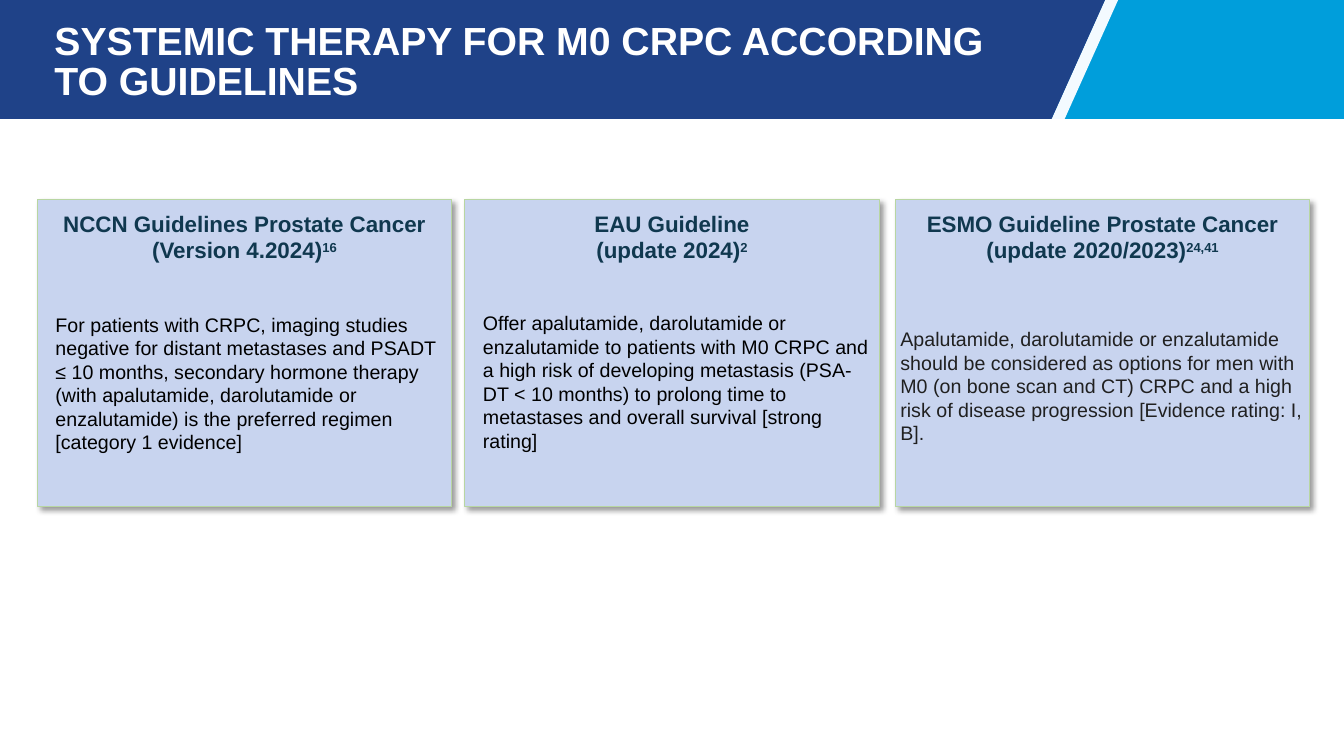
from lxml.etree import SubElement as Sub
from pptx import Presentation
from pptx.dml.color import RGBColor
from pptx.enum.shapes import MSO_SHAPE as Shape
from pptx.enum.text import MSO_ANCHOR as Anchor, PP_ALIGN as Align
from pptx.oxml.ns import qn
from pptx.util import Inches, Pt

WIDE, HIGH = 13.33, 7.5
BAND = 1.18                      # height of the header band
SLANT = 10.96, 10.43             # top and bottom x of its slanted edge
STRIPE = 0.13                    # width of the pale stripe
TOP, CARD_W, CARD_H = 1.98, 4.11, 3.05

HEAD = {"size": Pt(16), "bold": True, "name": "Arial"}
BODY = {"size": Pt(14), "bold": False, "name": "Arial"}
TITLE = {"size": Pt(28), "bold": True, "name": "Arial"}

# left, heading, reference, text, text colour, indent, gap above text
CARDS = [
    (0.37, "NCCN Guidelines Prostate Cancer (Version 4.2024)", "16",
     "For patients with CRPC, imaging studies negative for distant metastases "
     "and PSADT ≤ 10 months, secondary hormone therapy (with apalutamide, "
     "darolutamide or enzalutamide) is the preferred regimen "
     "[category 1 evidence]", "000000", 0.13, 29),
    (4.61, "EAU Guideline\n(update 2024)", "2",
     "Offer apalutamide, darolutamide or enzalutamide to patients with M0 CRPC "
     "and a high risk of developing metastasis (PSA-DT < 10 months) to prolong "
     "time to metastases and overall survival [strong rating]",
     "000000", 0.13, 28),
    (8.88, "ESMO Guideline Prostate Cancer (update 2020/2023)", "24,41",
     "Apalutamide, darolutamide or enzalutamide should be considered as options "
     "for men with M0 (on bone scan and CT) CRPC and a high risk of disease "
     "progression [Evidence rating: I, B].", "202020", 0, 39.5),
]


def put(item, form):
    for key, val in form.items():
        setattr(item, key, val)


def paint(part, tint):
    part.solid()
    part.fore_color.rgb = RGBColor.from_string(tint)


def style(para, form, tint):
    for run in para.runs:
        put(run.font, form)
        paint(run.font.fill, tint)


def inset(frame, left, top, right, low):
    put(frame, {"margin_left": Inches(left), "margin_top": Inches(top),
                "margin_right": Inches(right), "margin_bottom": Inches(low),
                "word_wrap": True})


def outline(slide, points, tint):
    spots = [(Inches(x), Inches(y)) for x, y in points]
    build = slide.shapes.build_freeform(*spots[0])
    build.add_line_segments(spots[1:], close=True)
    shape = build.convert_to_shape()
    shape.shadow.inherit = False
    shape.line.fill.background()
    paint(shape.fill, tint)


def rect(slide, left, top, width, height, tint):
    shape = slide.shapes.add_shape(
        Shape.RECTANGLE, *map(Inches, (left, top, width, height)))
    shape.shadow.inherit = False
    shape.line.fill.background()
    paint(shape.fill, tint)
    return shape


def shade(shape):
    """Soft shadow down and to the right."""
    effect = shape._element.spPr.find(qn("a:effectLst"))
    outer = Sub(effect, qn("a:outerShdw"), blurRad=str(Pt(4)), dist=str(Pt(3)),
                dir="2700000", algn="tl", rotWithShape="0")
    color = Sub(outer, qn("a:srgbClr"), val="000000")
    Sub(color, qn("a:alpha"), val="40000")


def header(slide):
    high, low = SLANT
    rect(slide, low, 0, WIDE - low, BAND, "009EDB")
    outline(slide, [(high, 0), (high + STRIPE, 0), (low + STRIPE, BAND),
                    (low, BAND)], "F3FAFF")
    outline(slide, [(0, 0), (high, 0), (low, BAND), (0, BAND)], "1F4288")


def title(slide, text):
    box = slide.shapes.title
    put(box, {"left": Inches(0.54), "top": Inches(0.14),
              "width": Inches(9.5), "height": Inches(0.97)})
    frame = box.text_frame
    inset(frame, 0, 0.05, 0.1, 0.05)
    frame.vertical_anchor = Anchor.MIDDLE
    para = frame.paragraphs[0]
    para.text = text
    put(para, {"alignment": Align.LEFT, "line_spacing": 0.85})
    style(para, TITLE, "FFFFFF")


def card(slide, left, head, ref, text, tint, indent, gap):
    shape = rect(slide, left, TOP, CARD_W, CARD_H, "C8D4EF")
    paint(shape.line.fill, "B8D6A2")
    shape.line.width = Pt(0.75)
    shade(shape)
    frame = shape.text_frame
    inset(frame, 0.05, 0.1, 0.05, 0.1)
    frame.vertical_anchor = Anchor.TOP

    # Heading with raised reference number
    para = frame.paragraphs[0]
    para.text = head
    note = para.add_run()
    note.text = ref
    put(para, {"alignment": Align.CENTER, "space_after": Pt(6)})
    style(para, HEAD, "10384F")
    note._r.get_or_add_rPr().set("baseline", "30000")

    # Recommendation
    para = frame.add_paragraph()
    para.text = text
    put(para, {"alignment": Align.LEFT, "space_before": Pt(gap),
               "space_after": Pt(6)})
    para._p.get_or_add_pPr().set("marL", str(Inches(indent)))
    style(para, BODY, tint)


def main():
    deck = Presentation()
    put(deck, {"slide_width": Inches(WIDE), "slide_height": Inches(HIGH)})
    slide = deck.slides.add_slide(deck.slide_layouts[5])
    header(slide)
    title(slide, "SYSTEMIC THERAPY FOR M0 CRPC ACCORDING TO GUIDELINES")
    # Bring the title in front of the band
    slide.shapes._spTree.append(slide.shapes.title._element)
    for row in CARDS:
        card(slide, *row)
    deck.save("out.pptx")


if __name__ == "__main__":
    main()
